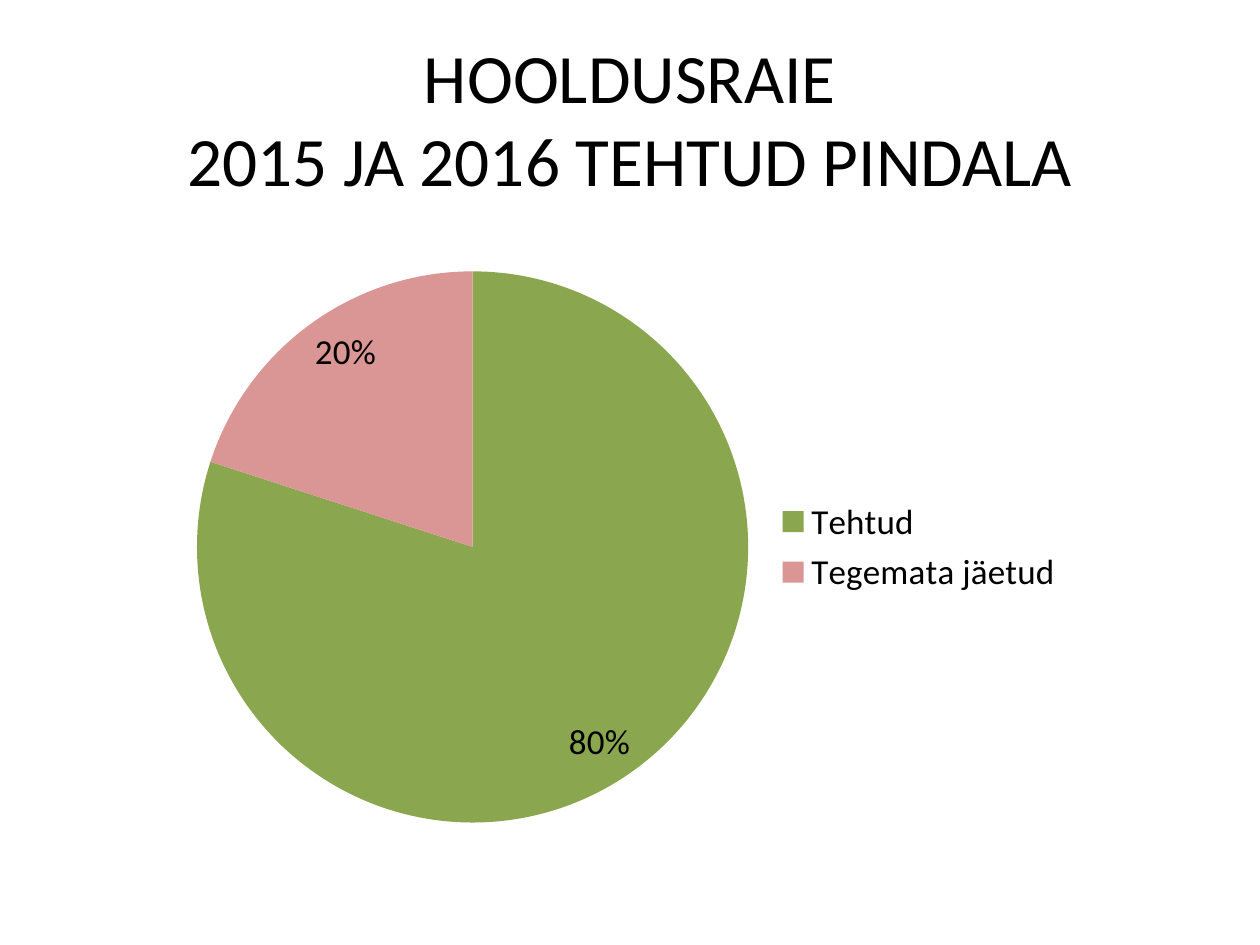
from pptx import Presentation
from pptx.chart.data import CategoryChartData
from pptx.dml.color import RGBColor
from pptx.enum.chart import XL_CHART_TYPE as ChartType
from pptx.enum.chart import XL_LABEL_POSITION as LabelPosition
from pptx.enum.chart import XL_LEGEND_POSITION as LegendPosition
from pptx.enum.text import MSO_ANCHOR, PP_ALIGN
from pptx.util import Emu, Pt

EMU_PER_PX = 914400 / 126
COLORS = {
    "text": "000000",
    "done": "8AA64F",
    "left_undone": "D99694",
}


class SlideBuilder:
    font_name = "Calibri"

    def __init__(self, slide):
        self.slide = slide

    def px(self, *lengths):
        return [Emu(round(length * EMU_PER_PX)) for length in lengths]

    def color(self, name):
        return RGBColor.from_string(COLORS[name])

    def style_font(self, font, size):
        font.name = self.font_name
        font.size = Pt(size)
        font.color.rgb = self.color("text")

    def title(self, text, box, size):
        shape = self.slide.shapes.title
        shape.left, shape.top, shape.width, shape.height = self.px(*box)
        frame = shape.text_frame
        frame.text = text
        frame.word_wrap = True
        frame.vertical_anchor = MSO_ANCHOR.MIDDLE
        paragraph = frame.paragraphs[0]
        paragraph.alignment = PP_ALIGN.CENTER
        self.style_font(paragraph.font, size)

    def pie(self, shares, box, size):
        """Draw a pie from (category, value, color name) rows."""
        data = CategoryChartData()
        data.categories = [category for category, _, _ in shares]
        data.add_series("Series 1", [value for _, value, _ in shares])
        chart = self.slide.shapes.add_chart(ChartType.PIE, *self.px(*box), data).chart
        chart.has_title = False
        self.style_font(chart.font, size)

        chart.has_legend = True
        chart.legend.position = LegendPosition.RIGHT
        chart.legend.include_in_layout = False
        self.style_font(chart.legend.font, size)

        plot = chart.plots[0]
        plot.vary_by_categories = True
        for index, (_, _, color_name) in enumerate(shares):
            fill = plot.series[0].points[index].format.fill
            fill.solid()
            fill.fore_color.rgb = self.color(color_name)

        plot.has_data_labels = True
        labels = plot.data_labels
        labels.show_value = False
        labels.show_percentage = True
        labels.number_format = "0%"
        labels.number_format_is_linked = False
        labels.position = LabelPosition.INSIDE_END
        self.style_font(labels.font, size)


def main():
    presentation = Presentation()
    title_only = presentation.slide_layouts[5]
    builder = SlideBuilder(presentation.slides.add_slide(title_only))
    presentation.slide_width, presentation.slide_height = builder.px(1260, 945)

    builder.title("HOOLDUSRAIE\v2015 JA 2016 TEHTUD PINDALA", (63, 38, 1134, 158), 39.6)
    builder.pie(
        [("Tehtud", 80, "done"), ("Tegemata jäetud", 20, "left_undone")],
        (174, 254, 903, 586),
        20,
    )
    presentation.save("out.pptx")


if __name__ == "__main__":
    main()
